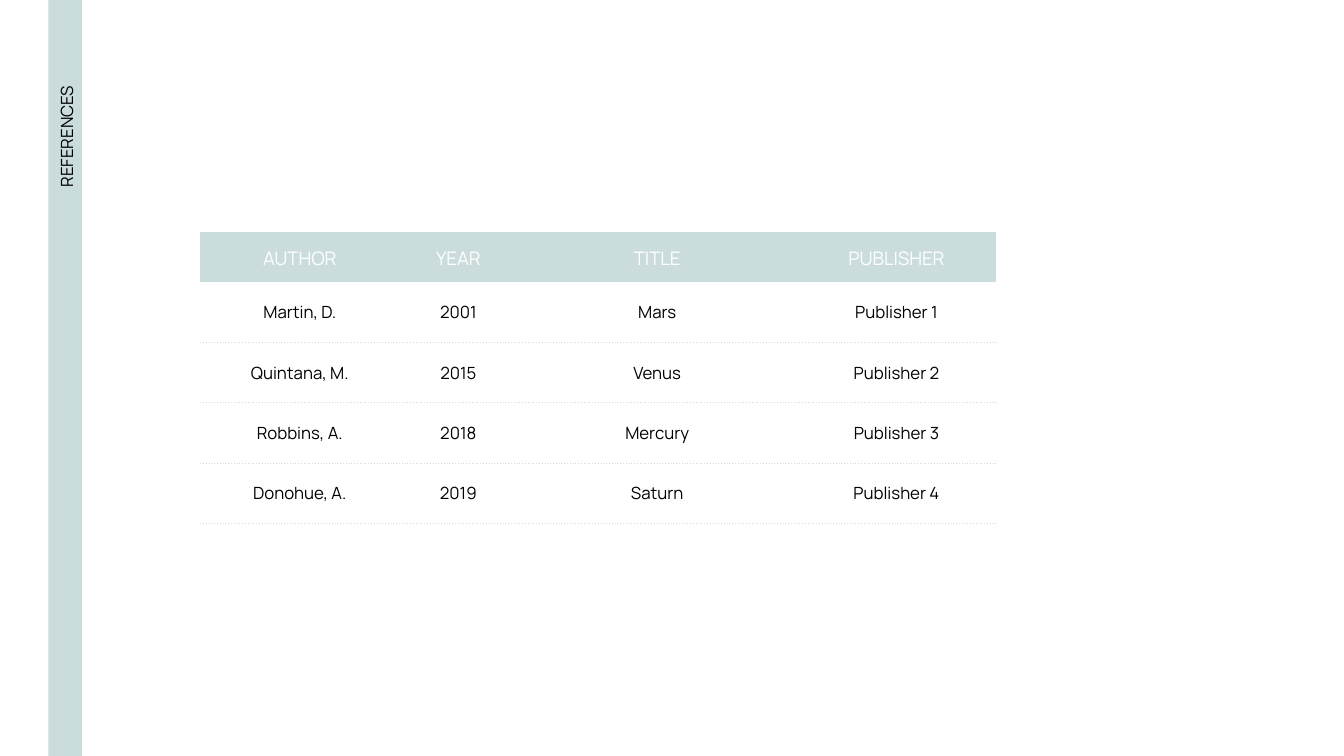
from typing import NamedTuple

from lxml.etree import SubElement as Sub
from pptx import Presentation
from pptx.dml.color import RGBColor
from pptx.enum.shapes import MSO_SHAPE as Shape
from pptx.enum.text import MSO_ANCHOR as Anchor, PP_ALIGN as Align
from pptx.oxml.ns import qn
from pptx.util import Pt

FONT = "Manrope"
MINT, BLACK, WHITE = "CADCDC", "000000", "FFFFFF"
PAD = 7.2
HEAD, BODY = 25.2, 32.4


class Col(NamedTuple):
    name: str
    width: float


class Book(NamedTuple):
    author: str
    year: str
    title: str
    house: str


COLS = [Col("AUTHOR", 106.56), Col("YEAR", 63.36),
        Col("TITLE", 149.76), Col("PUBLISHER", 106.56)]
BOOKS = [
    Book("Martin, D.", "2001", "Mars", "Publisher 1"),
    Book("Quintana, M.", "2015", "Venus", "Publisher 2"),
    Book("Robbins, A.", "2018", "Mercury", "Publisher 3"),
    Book("Donohue, A.", "2019", "Saturn", "Publisher 4"),
]


def paint(fill, color: str) -> None:
    fill.solid()
    fill.fore_color.rgb = RGBColor.from_string(color)


def write(frame, text: str, *, size: float = 9, color: str = BLACK,
          align=Align.CENTER) -> None:
    para = frame.paragraphs[0]
    para.alignment = align
    run = para.add_run()
    run.text = text
    run.font.name = FONT
    run.font.size = Pt(size)
    paint(run.font.fill, color)


def pad(box) -> None:
    """Give a cell or text frame even margins and centre it vertically."""
    box.margin_left = box.margin_right = Pt(PAD)
    box.margin_top = box.margin_bottom = Pt(PAD)
    box.vertical_anchor = Anchor.MIDDLE


def edge(cell, side: str, dotted: bool) -> None:
    """Set one cell border: a dotted rule or nothing."""
    line = Sub(cell._tc.get_or_add_tcPr(), qn(f"a:ln{side}"), w=str(Pt(0.75)))
    if dotted:
        fill = Sub(line, qn("a:solidFill"))
        Sub(fill, qn("a:srgbClr"), val=MINT)
        Sub(line, qn("a:prstDash"), val="dot")
    else:
        Sub(line, qn("a:noFill"))


def add_bar(slide) -> None:
    bar = slide.shapes.add_shape(
        Shape.RECTANGLE, Pt(25.92), Pt(-3.6), Pt(18), Pt(412.56))
    bar.shadow.inherit = False
    paint(bar.fill, MINT)
    bar.line.fill.background()


def add_title(slide) -> None:
    box = slide.shapes.add_textbox(
        Pt(-133.92), Pt(200.16), Pt(339.12), Pt(16.56))
    box.rotation = 270
    frame = box.text_frame
    frame.word_wrap = True
    pad(frame)
    write(frame, "REFERENCES", align=Align.RIGHT)


def add_books(slide) -> None:
    rows = [[col.name for col in COLS], *BOOKS]
    table = slide.shapes.add_table(
        len(rows), len(COLS), Pt(107.28), Pt(124.56),
        Pt(sum(col.width for col in COLS)),
        Pt(HEAD + BODY * len(BOOKS))).table
    table.first_row = table.horz_banding = False
    for c, col in enumerate(COLS):
        table.columns[c].width = Pt(col.width)
    for r, row in enumerate(rows):
        head = r == 0
        table.rows[r].height = Pt(HEAD if head else BODY)
        for c, text in enumerate(row):
            cell = table.cell(r, c)
            pad(cell)
            for side in "LRTB":
                edge(cell, side, side == "T" and r > 1 or side == "B" and r > 0)
            if head:
                paint(cell.fill, MINT)
                write(cell.text_frame, text, size=10, color=WHITE)
            else:
                cell.fill.background()
                write(cell.text_frame, text)


def main() -> None:
    deck = Presentation()
    deck.slide_width, deck.slide_height = Pt(720), Pt(405)
    slide = deck.slides.add_slide(deck.slide_layouts[6])
    paint(slide.background.fill, WHITE)
    add_bar(slide)
    add_title(slide)
    add_books(slide)
    deck.save("out.pptx")


if __name__ == "__main__":
    main()
